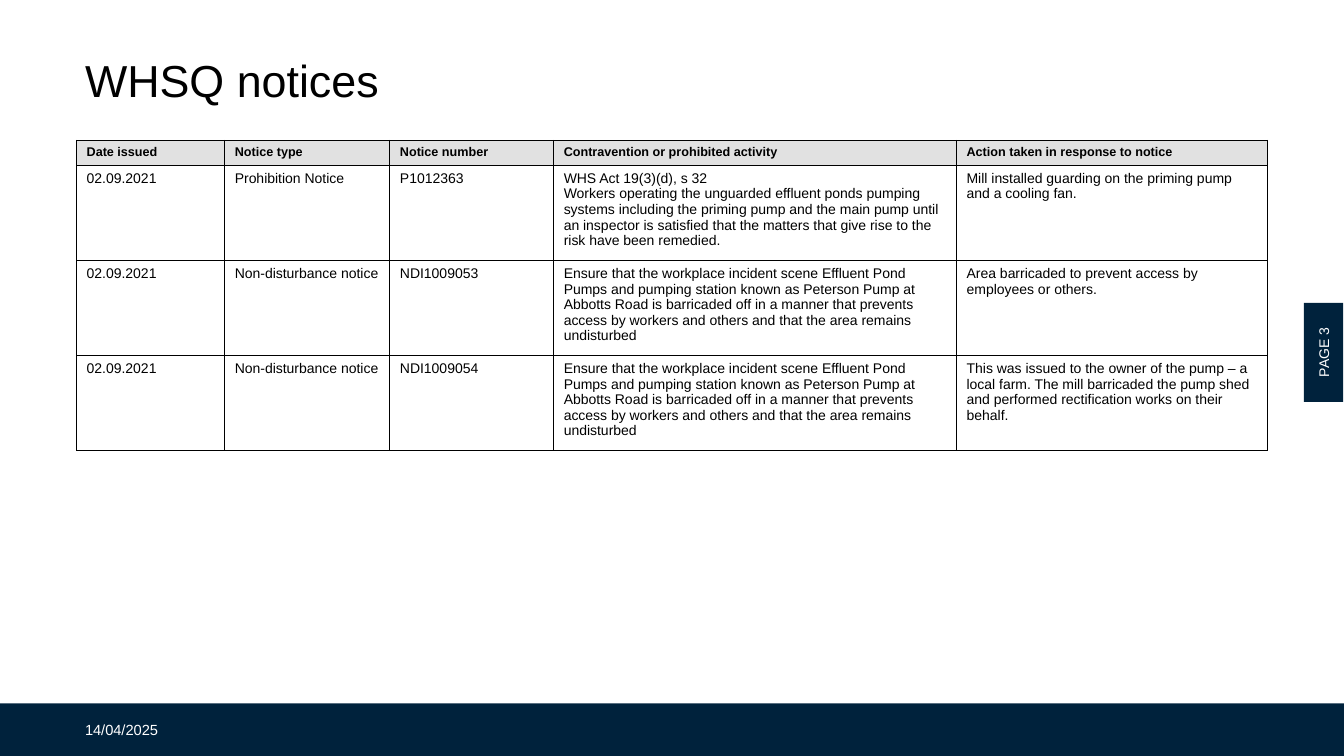
from lxml.etree import SubElement
from pptx import Presentation
from pptx.dml.color import RGBColor
from pptx.enum.shapes import MSO_SHAPE
from pptx.enum.text import MSO_ANCHOR, PP_ALIGN
from pptx.oxml.ns import qn
from pptx.util import Pt

NAVY, WHITE, BLACK, GREY = "00223C", "FFFFFF", "000000", "E1E1E1"
COLUMN_WIDTHS = [105.84, 118, 117, 287.8, 222]
ROW_HEIGHTS = [17.2, 67.9, 67.9, 67.9]
BARRICADE_ORDER = (
    "Ensure that the workplace incident scene Effluent Pond Pumps and pumping station "
    "known as Peterson Pump at Abbotts Road is barricaded off in a manner that prevents "
    "access by workers and others and that the area remains undisturbed"
)
NOTICES = [
    ["Date issued", "Notice type", "Notice number",
     "Contravention or prohibited activity", "Action taken in response to notice"],
    ["02.09.2021", "Prohibition Notice", "P1012363",
     "WHS Act 19(3)(d), s 32\n"
     "Workers operating the unguarded effluent ponds pumping systems including the "
     "priming pump and the main pump until an inspector is satisfied that the matters "
     "that give rise to the risk have been remedied.",
     "Mill installed guarding on the priming pump and a cooling fan."],
    ["02.09.2021", "Non-disturbance notice", "NDI1009053", BARRICADE_ORDER,
     "Area barricaded to prevent access by employees or others."],
    ["02.09.2021", "Non-disturbance notice", "NDI1009054", BARRICADE_ORDER,
     "This was issued to the owner of the pump – a local farm. The mill barricaded "
     "the pump shed and performed rectification works on their behalf."],
]


def color(hex_code):
    """Turn a hex string into a colour."""
    return RGBColor.from_string(hex_code)


def write(frame, text, size, hex_code, bold=False, align=PP_ALIGN.LEFT):
    """Fill a text frame with uniformly formatted Arial text."""
    frame.text = text
    for paragraph in frame.paragraphs:
        paragraph.alignment = align
        for run in paragraph.runs:
            run.font.name = "Arial"
            run.font.size = Pt(size)
            run.font.bold = bold
            run.font.color.rgb = color(hex_code)


def set_insets(frame):
    """Apply the slide's usual text margins and middle anchoring."""
    frame.margin_left = frame.margin_right = Pt(6)
    frame.margin_top = frame.margin_bottom = Pt(3)
    frame.vertical_anchor = MSO_ANCHOR.MIDDLE
    frame.word_wrap = True


def add_label(slide, left, top, width, height, text, size, hex_code):
    """Add a left-aligned text box."""
    label = slide.shapes.add_textbox(Pt(left), Pt(top), Pt(width), Pt(height))
    set_insets(label.text_frame)
    write(label.text_frame, text, size, hex_code)


def add_band(slide, left, top, width, height):
    """Add a plain navy rectangle."""
    band = slide.shapes.add_shape(
        MSO_SHAPE.RECTANGLE, Pt(left), Pt(top), Pt(width), Pt(height))
    band.shadow.inherit = False
    band.fill.solid()
    band.fill.fore_color.rgb = color(NAVY)
    band.line.fill.background()
    return band


def add_page_tab(slide, text):
    """Add the page number tab, turned to run up the right edge."""
    tab = add_band(slide, 910, 237.6, 70.8, 28.2)
    tab.rotation = 270
    set_insets(tab.text_frame)
    write(tab.text_frame, text, 10, WHITE, align=PP_ALIGN.CENTER)


def set_borders(cell):
    """Draw a thin black line on each side of a cell."""
    properties = cell._tc.get_or_add_tcPr()
    for position, side in enumerate(("a:lnL", "a:lnR", "a:lnT", "a:lnB")):
        border = SubElement(properties, qn(side), w=str(Pt(0.75)))
        properties.insert(position, border)
        fill = SubElement(border, qn("a:solidFill"))
        SubElement(fill, qn("a:srgbClr"), val=BLACK)


def add_notice_table(slide):
    """Add the table of notices with a grey header row."""
    table = slide.shapes.add_table(
        len(NOTICES), len(COLUMN_WIDTHS), Pt(54.7), Pt(100.3),
        Pt(sum(COLUMN_WIDTHS)), Pt(sum(ROW_HEIGHTS))).table
    table.horz_banding = False
    for column, width in zip(table.columns, COLUMN_WIDTHS):
        column.width = Pt(width)
    for row_index, (row, height, notice) in enumerate(
            zip(table.rows, ROW_HEIGHTS, NOTICES)):
        row.height = Pt(height)
        header = row_index == 0
        for cell, text in zip(row.cells, notice):
            write(cell.text_frame, text, 9 if header else 10, BLACK, bold=header)
            cell.fill.solid()
            cell.fill.fore_color.rgb = color(GREY if header else WHITE)
            set_borders(cell)


def main():
    """Build the notices slide and save it."""
    presentation = Presentation()
    presentation.slide_width, presentation.slide_height = Pt(960), Pt(540)
    slide = presentation.slides.add_slide(presentation.slide_layouts[6])
    add_band(slide, 0, 502.4, 960, 37.6)
    add_label(slide, 54.7, 31.7, 850.3, 51, "WHSQ notices", 32, BLACK)
    add_label(slide, 54.7, 507, 73.4, 28, "14/04/2025", 10.5, WHITE)
    add_page_tab(slide, "PAGE 3")
    add_notice_table(slide)
    presentation.save("out.pptx")


if __name__ == "__main__":
    main()
